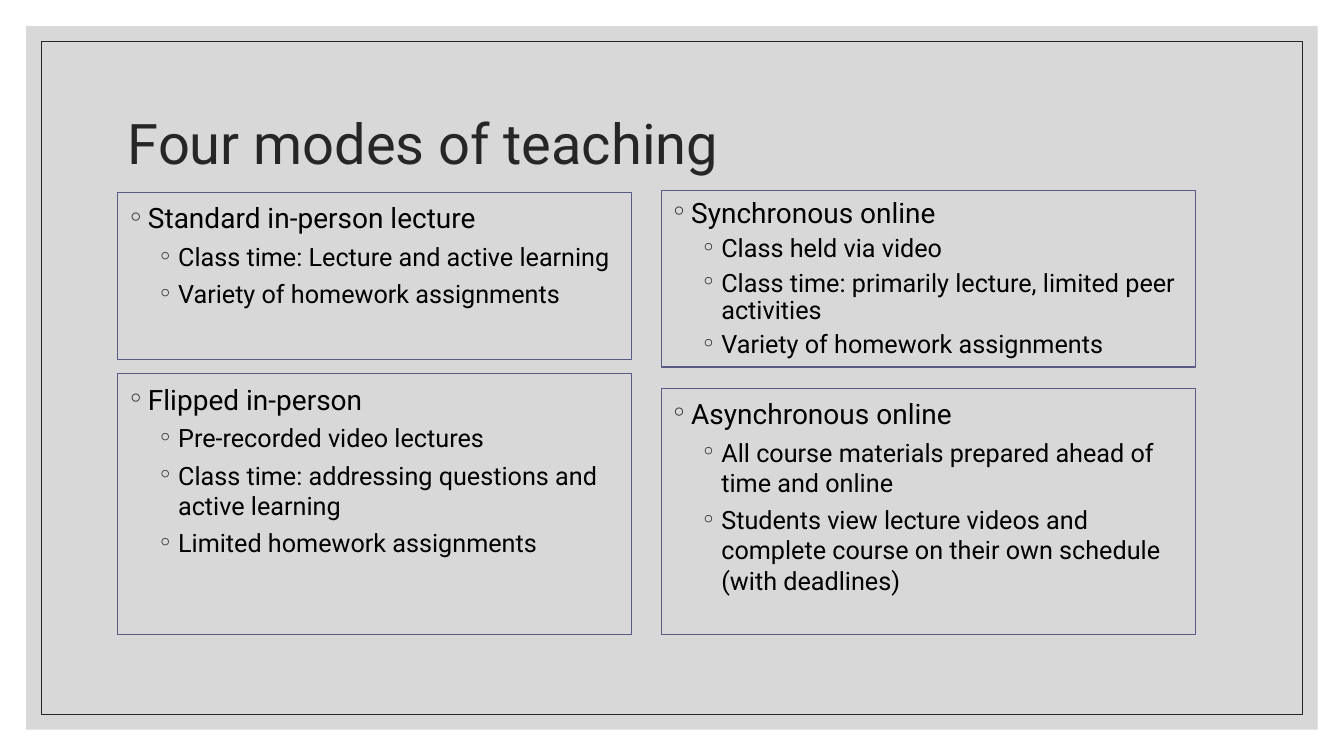
from lxml.etree import SubElement
from pptx import Presentation
from pptx.dml.color import RGBColor
from pptx.enum.shapes import MSO_SHAPE as Preset
from pptx.enum.text import MSO_ANCHOR as Anchor, PP_ALIGN as Align
from pptx.oxml.ns import qn
from pptx.util import Cm, Pt

FONT = "Roboto"
INK, BLACK, GREY, BORDER = "262626", "000000", "BFBFBF", "595A85"
SLIDE_WIDTH, SLIDE_HEIGHT = 33.87, 19.05
LEFT_COLUMN, LEFT_WIDTH = 2.97, 12.95
RIGHT_COLUMN, RIGHT_WIDTH = 16.66, 13.46

MODES = [
    ((LEFT_COLUMN, 4.85, LEFT_WIDTH, 4.2), 1.1, 1.0, "Standard in-person lecture", [
        "Class time: Lecture and active learning",
        "Variety of homework assignments"]),
    ((LEFT_COLUMN, 9.42, LEFT_WIDTH, 6.58), 1.1, 1.0, "Flipped in-person", [
        "Pre-recorded video lectures",
        "Class time: addressing questions and active learning",
        "Limited homework assignments"]),
    ((RIGHT_COLUMN, 9.78, RIGHT_WIDTH, 6.22), 1.1, 1.0, "Asynchronous online", [
        "All course materials prepared ahead of time and online",
        "Students view lecture videos and complete course on their own schedule (with deadlines)"]),
    ((RIGHT_COLUMN, 4.8, RIGHT_WIDTH, 4.45), 1.0, 0.9, "Synchronous online", [
        "Class held via video",
        "Class time: primarily lecture, limited peer activities",
        "Variety of homework assignments"]),
]


def color(value):
    """Turn a hex string into a colour."""
    return RGBColor.from_string(value)


def add_box(slide, box, line=None, line_width=0.75):
    """Add an unfilled rectangle, outlined when a line colour is given."""
    shape = slide.shapes.add_shape(Preset.RECTANGLE, *map(Cm, box))
    shape.shadow.inherit = False
    shape.fill.background()
    if line:
        shape.line.color.rgb = color(line)
        shape.line.width = Pt(line_width)
    else:
        shape.line.fill.background()
    return shape


def add_backdrop(slide, box):
    """Add the translucent grey panel with its thin inner frame."""
    left, top, width, height = box
    panel = add_box(slide, box)
    panel.fill.solid()
    panel.fill.fore_color.rgb = color(GREY)
    fill_color = panel.fill._xPr.find(qn("a:solidFill"))[0]
    SubElement(fill_color, qn("a:alpha"), val="60000")
    inset = 0.38
    add_box(slide, (left + inset, top + inset, width - 2 * inset, height - 2 * inset), INK, 0.5)


def style_text(paragraph, text, size, text_color, spacing):
    """Fill a paragraph and set its font and line spacing."""
    paragraph.text = text
    paragraph.alignment = Align.LEFT
    paragraph.line_spacing = spacing
    paragraph.font.name = FONT
    paragraph.font.size = Pt(size)
    paragraph.font.color.rgb = color(text_color)


def add_title(slide, box, text):
    """Add the slide title, centred vertically in its box."""
    frame = slide.shapes.add_textbox(*map(Cm, box)).text_frame
    frame.word_wrap = True
    frame.vertical_anchor = Anchor.MIDDLE
    style_text(frame.paragraphs[0], text, 40, INK, 0.9)


def add_bullet(paragraph, indent):
    """Give a paragraph a hanging circle bullet."""
    properties = paragraph._p.get_or_add_pPr()
    properties.set("marL", str(Cm(indent)))
    properties.set("indent", str(-Cm(0.51)))
    bullet_color = SubElement(properties, qn("a:buClr"))
    SubElement(bullet_color, qn("a:srgbClr"), val=INK)
    SubElement(properties, qn("a:buFont"), typeface=FONT)
    SubElement(properties, qn("a:buChar"), char="◦")


def add_mode(slide, box, heading_spacing, detail_spacing, heading, details):
    """Add one outlined teaching mode with its heading and details."""
    frame = add_box(slide, box, BORDER).text_frame
    frame.word_wrap = True
    frame.vertical_anchor = Anchor.TOP
    paragraph = frame.paragraphs[0]
    style_text(paragraph, heading, 20, BLACK, heading_spacing)
    paragraph.space_before = Pt(9)
    add_bullet(paragraph, 0.51)
    for detail in details:
        paragraph = frame.add_paragraph()
        paragraph.level = 1
        style_text(paragraph, detail, 18, BLACK, detail_spacing)
        paragraph.space_before = Pt(5)
        add_bullet(paragraph, 1.27)


def main():
    """Build and save the slide."""
    presentation = Presentation()
    presentation.slide_width = Cm(SLIDE_WIDTH)
    presentation.slide_height = Cm(SLIDE_HEIGHT)
    slide = presentation.slides.add_slide(presentation.slide_layouts[6])
    margin = 0.66
    add_backdrop(slide, (margin, margin, SLIDE_WIDTH - 2 * margin, SLIDE_HEIGHT - 2 * margin))
    add_title(slide, (LEFT_COLUMN, 1.78, 27.94, 3.81), "Four modes of teaching")
    for mode in MODES:
        add_mode(slide, *mode)
    presentation.save("out.pptx")


if __name__ == "__main__":
    main()
